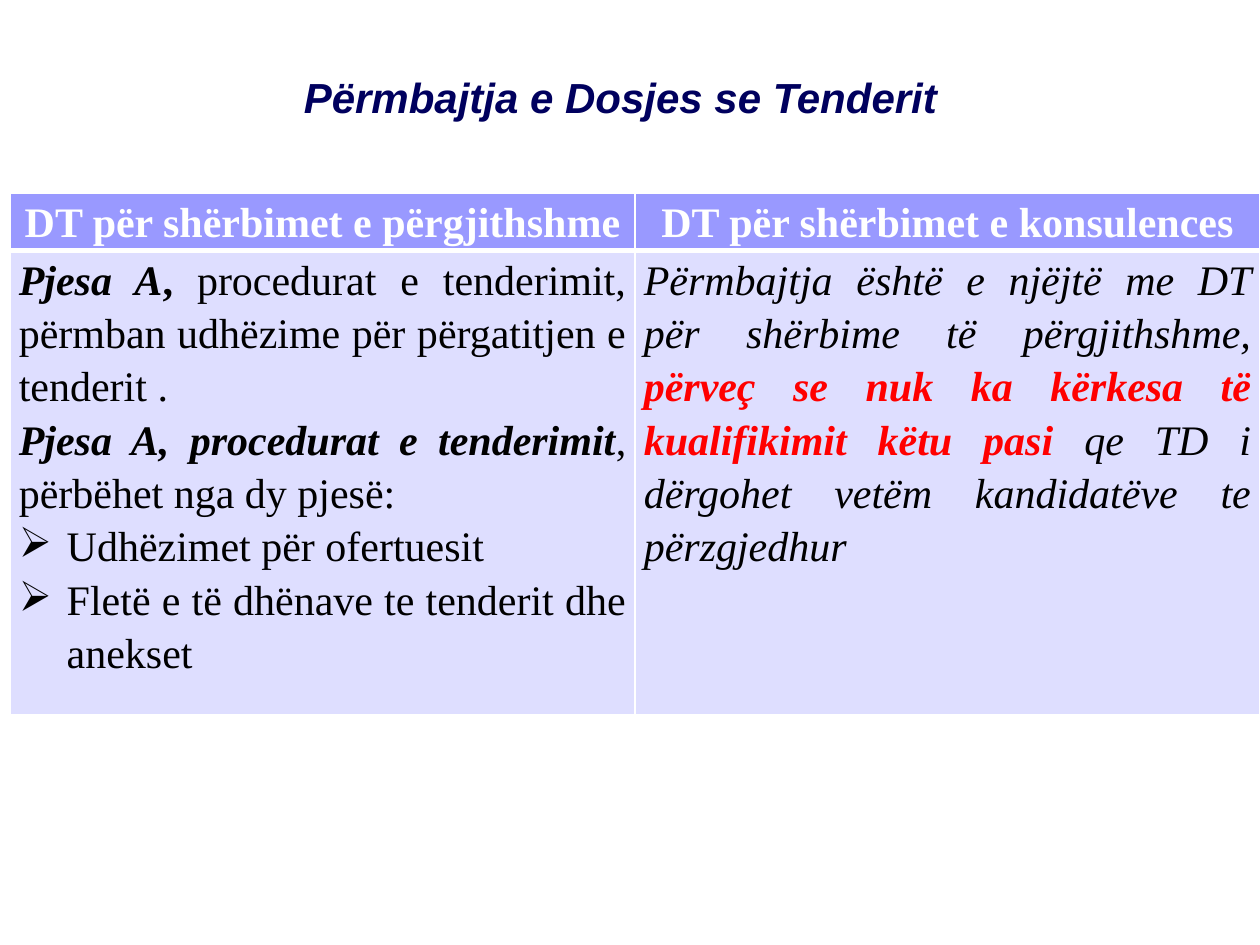
from lxml import etree
from pptx import Presentation
from pptx.dml.color import RGBColor
from pptx.enum.text import PP_ALIGN
from pptx.oxml.ns import qn
from pptx.util import Inches, Pt

CENTER, JUSTIFY = PP_ALIGN.CENTER, PP_ALIGN.JUSTIFY
NAVY, WHITE, BLACK, RED = "00005E", "FFFFFF", "000000", "FF0000"
HEADER_FILL, BODY_FILL = "9999FF", "DEDEFF"
TITLE_FONT, TABLE_FONT = "Arial", "Times New Roman"
BOLD, ITALIC = {"bold": True}, {"italic": True}
BOLD_ITALIC = {**BOLD, **ITALIC}

HEADERS = ["DT për shërbimet e përgjithshme", "DT për shërbimet e konsulences"]
# Each paragraph is a list of (text, format, colour) runs
GENERAL_SERVICES = [
    [("Pjesa A", BOLD_ITALIC, BLACK),
     (",", BOLD, BLACK),
     (" procedurat e tenderimit, përmban udhëzime për përgatitjen e tenderit .", {}, BLACK)],
    [("Pjesa A, procedurat e tenderimit", BOLD_ITALIC, BLACK),
     (", përbëhet nga dy pjesë:", {}, BLACK)],
]
GENERAL_BULLETS = [
    [("Udhëzimet për ofertuesit", {}, BLACK)],
    [("Fletë e të dhënave te tenderit dhe anekset", {}, BLACK)],
]
CONSULTING_SERVICES = [
    [("Përmbajtja është e njëjtë me DT për shërbime të përgjithshme, ", ITALIC, BLACK),
     ("përveç se nuk ka kërkesa të kualifikimit këtu pasi", BOLD_ITALIC, RED),
     (" qe TD i dërgohet vetëm kandidatëve te përzgjedhur", ITALIC, BLACK)],
]


def rgb(color):
    return RGBColor.from_string(color)


def set_attributes(target, values):
    for name, value in values.items():
        setattr(target, name, value)


def add_run(paragraph, text, font_name, color, style):
    run = paragraph.add_run()
    run.text = text
    set_attributes(run.font, {"name": font_name, "size": Pt(24), **style})
    run.font.color.rgb = rgb(color)


def set_bullet(paragraph, indent):
    properties = paragraph._p.get_or_add_pPr()
    properties.set("marL", str(indent))
    properties.set("indent", str(-indent))
    etree.SubElement(properties, qn("a:buChar")).set("char", "➢")


def set_borders(cell, widths):
    properties = cell._tc.get_or_add_tcPr()
    for index, (side, width) in enumerate(widths.items()):
        line = etree.Element(qn(f"a:ln{side}"), w=str(Pt(width)))
        fill = etree.SubElement(line, qn("a:solidFill"))
        etree.SubElement(fill, qn("a:srgbClr")).set("val", WHITE)
        properties.insert(index, line)


def fill_cell(cell, color, paragraphs, alignment, borders, bullets=()):
    set_attributes(cell, {"margin_left": Inches(0.07), "margin_right": Inches(0.07),
                          "margin_top": 0, "margin_bottom": 0})
    cell.fill.solid()
    cell.fill.fore_color.rgb = rgb(color)
    set_borders(cell, borders)
    frame = cell.text_frame
    for index, runs in enumerate([*paragraphs, *bullets]):
        paragraph = frame.add_paragraph() if index else frame.paragraphs[0]
        set_attributes(paragraph, {"alignment": alignment, "line_spacing": 1.15})
        if index >= len(paragraphs):
            set_bullet(paragraph, Inches(0.38))
        for text, style, text_color in runs:
            add_run(paragraph, text, TABLE_FONT, text_color, style)


def add_title(slide, text):
    box = slide.shapes.add_textbox(Inches(0.51), Inches(0.52), Inches(8.83), Inches(1.01))
    box.text_frame.word_wrap = True
    paragraph = box.text_frame.paragraphs[0]
    paragraph.alignment = CENTER
    add_run(paragraph, text, TITLE_FONT, NAVY, BOLD_ITALIC)


def add_comparison_table(slide):
    table = slide.shapes.add_table(2, 2, Inches(0.08), Inches(1.53),
                                   Inches(9.92), Inches(3.8)).table
    for row, height in zip(table.rows, (0.41, 3.39)):
        row.height = Inches(height)

    # Header row, set off by a thick rule
    header_borders = {"L": 1, "R": 1, "T": 1, "B": 3}
    for column, text in enumerate(HEADERS):
        fill_cell(table.cell(0, column), HEADER_FILL, [[(text, BOLD, WHITE)]],
                  CENTER, header_borders)

    # Body row
    body_borders = {"L": 1, "R": 1, "T": 3, "B": 1}
    fill_cell(table.cell(1, 0), BODY_FILL, GENERAL_SERVICES, JUSTIFY,
              body_borders, GENERAL_BULLETS)
    fill_cell(table.cell(1, 1), BODY_FILL, CONSULTING_SERVICES, JUSTIFY, body_borders)


def main():
    presentation = Presentation()
    presentation.slide_width, presentation.slide_height = Inches(10), Inches(7.5)
    slide = presentation.slides.add_slide(presentation.slide_layouts[6])
    add_title(slide, "Përmbajtja e Dosjes se Tenderit")
    add_comparison_table(slide)
    presentation.save("out.pptx")


if __name__ == "__main__":
    main()
